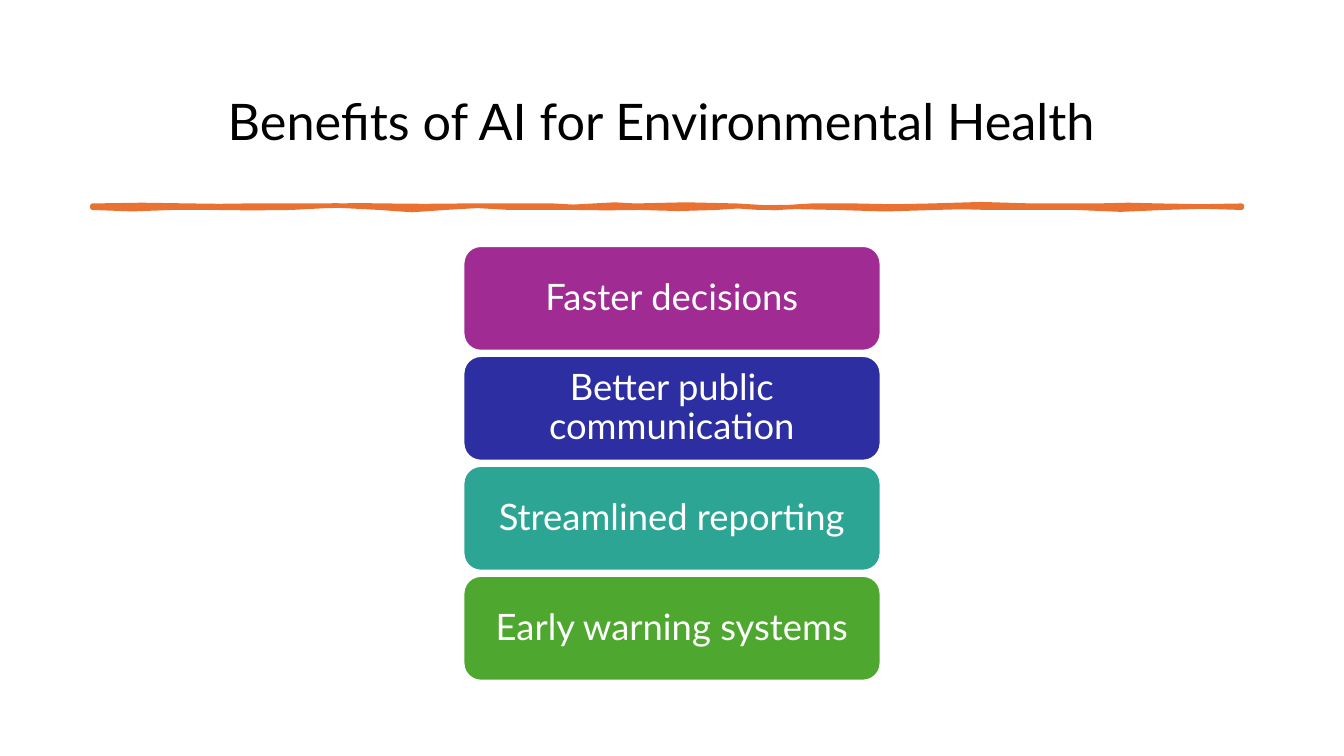
from pptx import Presentation
from pptx.dml.color import RGBColor
from pptx.enum.shapes import MSO_SHAPE
from pptx.enum.text import MSO_ANCHOR, MSO_AUTO_SIZE, PP_ALIGN
from pptx.util import Pt

ROUNDED = MSO_SHAPE.ROUNDED_RECTANGLE
MIDDLE = MSO_ANCHOR.MIDDLE
CENTER = PP_ALIGN.CENTER
NO_AUTOFIT = MSO_AUTO_SIZE.NONE
TITLE_ONLY = 5
FONT = "Lato"
COLORS = {
    "black": "000000",
    "white": "FFFFFF",
    "orange": "E97132",
    "purple": "A02B93",
    "blue": "2C2EA2",
    "teal": "2DA594",
    "green": "4EA72E",
}
BENEFITS = [
    ("Faster decisions", "purple"),
    ("Better public communication", "blue"),
    ("Streamlined reporting", "teal"),
    ("Early warning systems", "green"),
]
TOP_EDGE = [
    (0, 0), (71, -1.4), (110, -0.7), (172, -0.7), (210, -1.4), (265, -0.7),
    (329, -0.7), (358, 1.4), (388, -0.7), (460, -2.9), (514, 1.4), (545, 1.4),
    (599, 2.9), (671, 0), (717, 0), (763, -1.4), (821, 0),
]
BOTTOM_EDGE = [
    (821, 0), (766, -2.2), (703, 1.4), (640, 1.4), (602, 0), (531, 2.9),
    (476, 1.4), (446, -1.4), (391, 0.7), (344, 1.4), (298, 1.4), (252, -2.2),
    (205, 2.2), (142, -2.2), (87, -1.4), (57, -1.4), (0, 1.4),
]


def color(name):
    return RGBColor.from_string(COLORS[name])


def format_run(run, size, color_name):
    run.font.name = FONT
    run.font.size = Pt(size)
    run.font.color.rgb = color(color_name)


def add_title(slide, left, top, width, height):
    title = slide.shapes.title
    title.left, title.top = Pt(left), Pt(top)
    title.width, title.height = Pt(width), Pt(height)
    frame = title.text_frame
    frame.text = "Benefits of AI for Environmental Health"
    frame.auto_size = NO_AUTOFIT
    frame.vertical_anchor = MIDDLE
    paragraph = frame.paragraphs[0]
    paragraph.alignment = CENTER
    paragraph.line_spacing = 0.9
    format_run(paragraph.runs[0], 36, "black")
    trailing_space = paragraph.add_run()
    trailing_space.text = " "
    format_run(trailing_space, 60, "black")


def wavy_points(knots, left, baseline):
    points = [(Pt(left + knots[0][0]), Pt(baseline))]
    for (x1, lean1), (x2, lean2) in zip(knots, knots[1:]):
        crest = baseline + 0.375 * (lean2 - lean1)
        points.append((Pt(left + (x1 + x2) / 2), Pt(crest)))
        points.append((Pt(left + x2), Pt(baseline)))
    return points


def add_brush_line(slide, left, top, height):
    outline = wavy_points(TOP_EDGE, left, top)
    outline += wavy_points(BOTTOM_EDGE, left, top + height)
    builder = slide.shapes.build_freeform(*outline[0])
    builder.add_line_segments(outline[1:], close=True)
    brush = builder.convert_to_shape()
    brush.shadow.inherit = False
    brush.fill.solid()
    brush.fill.fore_color.rgb = color("orange")
    brush.line.color.rgb = color("orange")
    brush.line.width = Pt(3.25)


def add_benefit(slide, text, fill_name, left, top, width, height):
    card = slide.shapes.add_shape(ROUNDED, Pt(left), Pt(top), Pt(width), Pt(height))
    card.shadow.inherit = False
    card.fill.solid()
    card.fill.fore_color.rgb = color(fill_name)
    card.line.color.rgb = color("white")
    card.line.width = Pt(1.5)
    frame = card.text_frame
    frame.text = text
    frame.word_wrap = True
    frame.vertical_anchor = MIDDLE
    frame.margin_left = frame.margin_right = Pt(7.8)
    frame.margin_top = frame.margin_bottom = Pt(3.9)
    paragraph = frame.paragraphs[0]
    paragraph.alignment = CENTER
    paragraph.line_spacing = 0.9
    format_run(paragraph.runs[0], 26, "white")


def add_benefits(slide, left, top, width, height, gap):
    count = len(BENEFITS)
    card_height = (height - gap * (count - 1)) / count
    for index, (text, fill_name) in enumerate(BENEFITS):
        card_top = top + index * (card_height + gap)
        add_benefit(slide, text, fill_name, left, card_top, width, card_height)


def main():
    presentation = Presentation()
    presentation.slide_width = Pt(960)
    presentation.slide_height = Pt(540)
    slide = presentation.slides.add_slide(presentation.slide_layouts[TITLE_ONLY])
    add_title(slide, 66, 29, 828, 104)
    add_brush_line(slide, 66, 147, 1.4)
    add_benefits(slide, 331, 175.7, 298, 310.5, 3.7)
    presentation.save("out.pptx")


if __name__ == "__main__":
    main()
